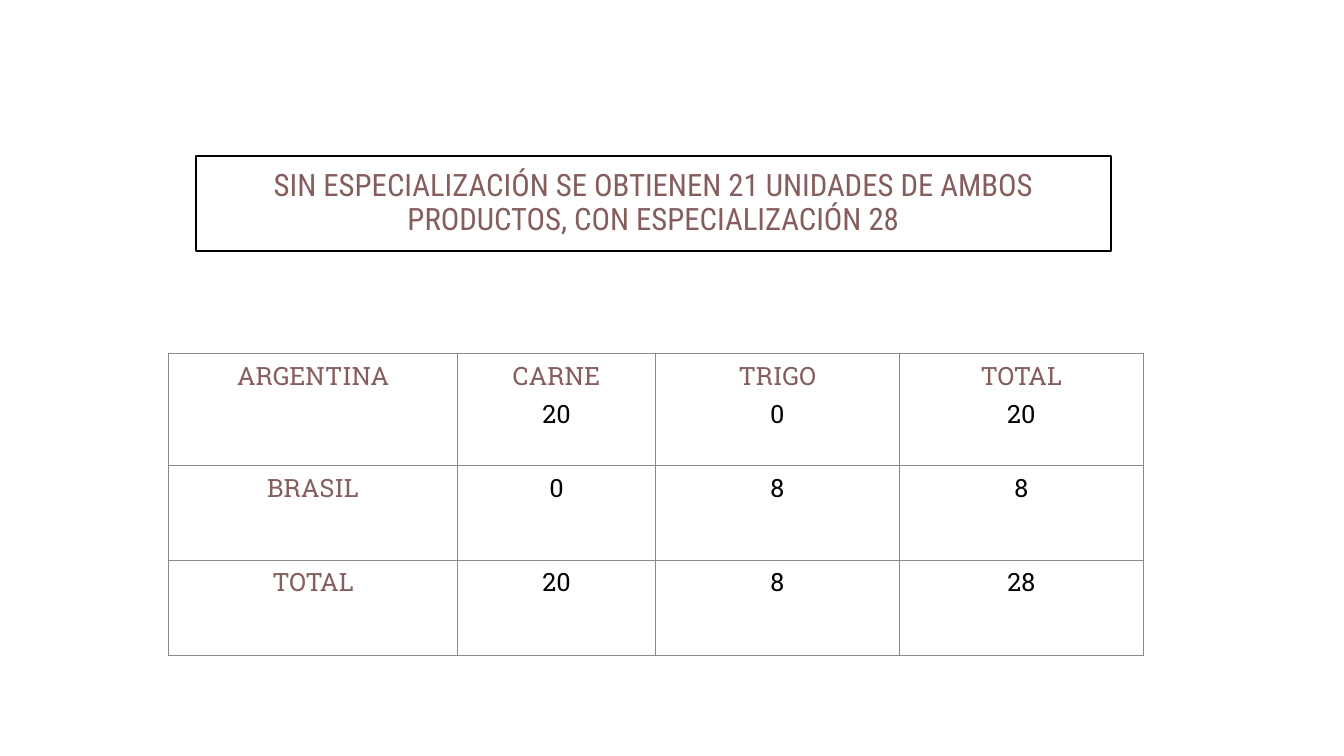
from dataclasses import dataclass

from lxml.etree import SubElement
from pptx import Presentation
from pptx.dml.color import RGBColor
from pptx.enum.text import MSO_ANCHOR, MSO_AUTO_SIZE, PP_ALIGN
from pptx.oxml.ns import qn
from pptx.slide import Slide
from pptx.table import _Cell as Cell
from pptx.text.text import _Paragraph as Paragraph
from pptx.util import Inches, Pt


@dataclass(frozen=True)
class Theme:
    accent: RGBColor = RGBColor(0x85, 0x5D, 0x5D)
    ink: RGBColor = RGBColor(0, 0, 0)
    grid: str = "918485"
    title_font: str = "Roboto Condensed"
    body_font: str = "Roboto Slab"
    title_size: int = 22
    body_size: int = 18


@dataclass(frozen=True)
class Entry:
    """Table cell content: a coloured label, a black value, or both."""
    label: str = ""
    value: str = ""


THEME = Theme()
TITLE = ("SIN ESPECIALIZACIÓN SE OBTIENEN 21 UNIDADES DE AMBOS PRODUCTOS, "
         "CON ESPECIALIZACIÓN 28")
COLUMN_WIDTHS = (2.87, 1.96, 2.42, 2.42)
ROW_HEIGHTS = (1.11, 0.94, 0.94)
PRODUCTION = (
    (Entry("ARGENTINA"), Entry("CARNE", "20"), Entry("TRIGO", "0"), Entry("TOTAL", "20")),
    (Entry("BRASIL"), Entry(value="0"), Entry(value="8"), Entry(value="8")),
    (Entry("TOTAL"), Entry(value="20"), Entry(value="8"), Entry(value="28")),
)


def format_paragraph(p: Paragraph, font: str, size: int, color: RGBColor) -> None:
    p.alignment = PP_ALIGN.CENTER
    p.font.name = font
    p.font.size = Pt(size)
    p.font.bold = False
    p.font.color.rgb = color


def add_title(s: Slide) -> None:
    title = s.shapes.title
    title.left, title.top = Inches(1.94), Inches(1.55)
    title.width, title.height = Inches(9.08), Inches(0.94)
    title.line.color.rgb = THEME.ink
    title.line.width = Pt(1.5)
    tf = title.text_frame
    tf.word_wrap = True
    tf.auto_size = MSO_AUTO_SIZE.NONE
    tf.vertical_anchor = MSO_ANCHOR.MIDDLE
    p = tf.paragraphs[0]
    p.text = TITLE
    p.line_spacing = 0.9
    format_paragraph(p, THEME.title_font, THEME.title_size, THEME.accent)


def set_borders(cell: Cell) -> None:
    tc_pr = cell._tc.get_or_add_tcPr()
    for side in ("lnL", "lnR", "lnT", "lnB"):
        line = SubElement(tc_pr, qn(f"a:{side}"), w=str(Pt(1)))
        fill = SubElement(line, qn("a:solidFill"))
        SubElement(fill, qn("a:srgbClr"), val=THEME.grid)


def fill_cell(cell: Cell, entry: Entry) -> None:
    set_borders(cell)
    cell.fill.background()
    lines = [(text, color) for text, color in
             ((entry.label, THEME.accent), (entry.value, THEME.ink)) if text]
    tf = cell.text_frame
    for i, (text, color) in enumerate(lines):
        p = tf.add_paragraph() if i else tf.paragraphs[0]
        p.text = text
        if i:
            p.space_before = Pt(0.2 * THEME.body_size)
        format_paragraph(p, THEME.body_font, THEME.body_size, color)


def add_production_table(s: Slide) -> None:
    table = s.shapes.add_table(
        len(ROW_HEIGHTS), len(COLUMN_WIDTHS), Inches(1.67), Inches(3.51),
        Inches(sum(COLUMN_WIDTHS)), Inches(sum(ROW_HEIGHTS))).table
    table.first_row = table.horz_banding = False
    for column, width in zip(table.columns, COLUMN_WIDTHS):
        column.width = Inches(width)
    for row, height, entries in zip(table.rows, ROW_HEIGHTS, PRODUCTION):
        row.height = Inches(height)
        for cell, entry in zip(row.cells, entries):
            fill_cell(cell, entry)


def main() -> None:
    prs = Presentation()
    prs.slide_width, prs.slide_height = Inches(13.33), Inches(7.5)
    s = prs.slides.add_slide(prs.slide_layouts.get_by_name("Title Only"))
    add_title(s)
    add_production_table(s)
    prs.save("out.pptx")


if __name__ == "__main__":
    main()
